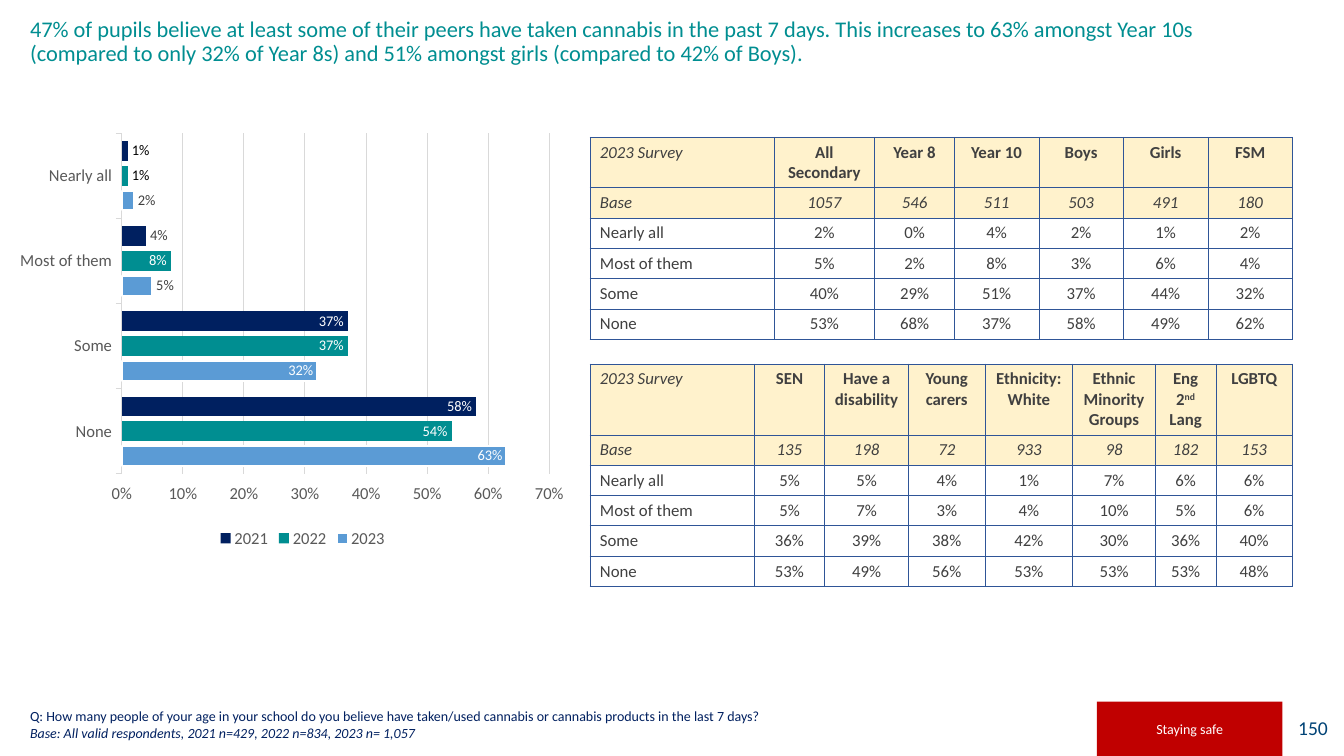
from dataclasses import dataclass

from pptx import Presentation
from pptx.chart.data import CategoryChartData as ChartData
from pptx.dml.color import RGBColor as Color
from pptx.enum.chart import XL_CHART_TYPE as ChartType
from pptx.enum.chart import XL_LABEL_POSITION as LabelSpot
from pptx.enum.chart import XL_LEGEND_POSITION as LegendSpot
from pptx.enum.chart import XL_TICK_MARK as Tick
from pptx.enum.shapes import MSO_SHAPE as Preset
from pptx.enum.text import MSO_ANCHOR as Anchor
from pptx.enum.text import PP_ALIGN as Align
from pptx.oxml import parse_xml
from pptx.oxml.ns import nsdecls
from pptx.util import Inches, Pt


@dataclass(frozen=True)
class Theme:
    font: str = "Calibri"
    navy: str = "002060"
    teal: str = "008E91"
    sky: str = "5B9BD5"
    red: str = "C00000"
    cream: str = "FFF2CC"
    border: str = "2F5597"
    number: str = "004376"
    ink: str = "404040"
    axis: str = "595959"
    grid: str = "D9D9D9"
    black: str = "000000"
    white: str = "FFFFFF"
    title: float = 16
    page: float = 14
    body: float = 12
    label: float = 10.5
    note: float = 10


THEME = Theme()
WIDTH, HEIGHT = Inches(13.33), Inches(7.5)
ROW = 4  # table row, percent of the slide height
MARGIN, TABLE_LEFT, TABLE_WIDTH = 1.5, 43.89, 52.29

CATEGORIES = ["None", "Some", "Most of them", "Nearly all"]
LABEL_STYLES = {
    "inside": (LabelSpot.INSIDE_END, THEME.white),
    "outside": (LabelSpot.OUTSIDE_END, THEME.ink),
    "dark": (LabelSpot.OUTSIDE_END, THEME.black),
}
# name, values, colour, label style, label exceptions by point
SERIES = [
    ("2023", [0.63, 0.32, 0.05, 0.02], THEME.sky, "outside", {0: "inside", 1: "inside"}),
    ("2022", [0.54, 0.37, 0.08, 0.01], THEME.teal, "inside", {3: "dark"}),
    ("2021", [0.58, 0.37, 0.04, 0.01], THEME.navy, "inside", {2: "outside", 3: "dark"}),
]

# Text between ^ signs is superscript
YEAR_TABLE = [
    ["2023 Survey", "All Secondary", "Year 8", "Year 10", "Boys", "Girls", "FSM"],
    ["Base", "1057", "546", "511", "503", "491", "180"],
    ["Nearly all", "2%", "0%", "4%", "2%", "1%", "2%"],
    ["Most of them", "5%", "2%", "8%", "3%", "6%", "4%"],
    ["Some", "40%", "29%", "51%", "37%", "44%", "32%"],
    ["None", "53%", "68%", "37%", "58%", "49%", "62%"],
]
GROUP_TABLE = [
    ["2023 Survey", "SEN", "Have a disability", "Young carers", "Ethnicity: White",
     "Ethnic Minority Groups", "Eng 2^nd^ Lang", "LGBTQ"],
    ["Base", "135", "198", "72", "933", "98", "182", "153"],
    ["Nearly all", "5%", "5%", "4%", "1%", "7%", "6%", "6%"],
    ["Most of them", "5%", "7%", "3%", "4%", "10%", "5%", "6%"],
    ["Some", "36%", "39%", "38%", "42%", "30%", "36%", "40%"],
    ["None", "53%", "49%", "56%", "53%", "53%", "53%", "48%"],
]


def place(left, top, width, height):
    """Turn percentages of the slide into lengths."""
    return [int(share * side / 100) for share, side in
            zip((left, top, width, height), (WIDTH, HEIGHT) * 2)]


def apply(target, values):
    for name, value in values.items():
        setattr(target, name, value)


def style_font(font, size, color, **values):
    apply(font, {"name": THEME.font, "size": Pt(size), **values})
    font.color.rgb = Color.from_string(color)


def paint(fill, color):
    fill.solid()
    fill.fore_color.rgb = Color.from_string(color)


def write(para, text, size, color, align=Align.LEFT, **values):
    para.alignment = align
    for index, part in enumerate(text.split("^")):
        span = para.add_run()
        span.text = part
        style_font(span.font, size, color, **values)
        if index % 2:
            span._r.get_or_add_rPr().set("baseline", "30000")


def add_text(page, area, anchor):
    box = page.shapes.add_textbox(*place(*area))
    apply(box.text_frame, {"word_wrap": True, "vertical_anchor": anchor})
    return box.text_frame


def add_panel(page, area, fill, text, size, color, align):
    panel = page.shapes.add_shape(Preset.RECTANGLE, *place(*area))
    panel.shadow.inherit = False
    paint(panel.fill, fill)
    panel.line.fill.background()
    panel.text_frame.vertical_anchor = Anchor.MIDDLE
    write(panel.text_frame.paragraphs[0], text, size, color, align)


def style_label(label, style):
    label.position, color = LABEL_STYLES[style]
    style_font(label.font, THEME.label, color)


def style_axis(axis, **values):
    apply(axis, {"major_tick_mark": Tick.OUTSIDE, "minor_tick_mark": Tick.NONE, **values})
    style_font(axis.tick_labels.font, THEME.body, THEME.axis)


def style_line(line, color, width):
    line.color.rgb = Color.from_string(color)
    line.width = Pt(width)


def add_bars(page, area):
    data = ChartData(number_format="0%")
    data.categories = CATEGORIES
    for name, values, *_ in SERIES:
        data.add_series(name, values)
    chart = page.shapes.add_chart(ChartType.BAR_CLUSTERED, *place(*area), data).chart
    apply(chart, {"has_title": False, "has_legend": True})
    style_font(chart.font, THEME.note, THEME.black)
    apply(chart.legend, {"position": LegendSpot.BOTTOM, "include_in_layout": False})
    style_font(chart.legend.font, THEME.body, THEME.axis)

    # Axes
    style_axis(chart.category_axis, has_major_gridlines=False)
    style_line(chart.category_axis.format.line, THEME.grid, 0.75)
    value_axis = chart.value_axis
    style_axis(value_axis, minimum_scale=0, maximum_scale=0.7, major_unit=0.1,
               has_major_gridlines=True)
    apply(value_axis.tick_labels, {"number_format": "0%", "number_format_is_linked": False})
    value_axis.format.line.fill.background()
    style_line(value_axis.major_gridlines.format.line, THEME.grid, 0.75)

    # Bars and their labels
    plot = chart.plots[0]
    apply(plot, {"gap_width": 80, "overlap": -25, "vary_by_categories": False})
    for series, (name, _, color, style, exceptions) in zip(plot.series, SERIES):
        paint(series.format.fill, color)
        series.invert_if_negative = False
        if name == "2023":
            style_line(series.format.line, THEME.white, 1.5)
        labels = series.data_labels
        apply(labels, {"show_value": True, "number_format": "0%",
                       "number_format_is_linked": False})
        style_label(labels, style)
        for point, other in exceptions.items():
            style_label(series.points[point].data_label, other)

    # Inner plot area, as shares of the chart
    frame = {"x": 0.17, "y": 0.09, "w": 0.78, "h": 0.74}
    modes = "".join(f'<c:{side}Mode val="edge"/>' for side in "xy")
    sides = "".join(f'<c:{side} val="{share}"/>' for side, share in frame.items())
    plot_area = chart._chartSpace.chart.plotArea
    for layout in plot_area.findall("{*}layout"):
        plot_area.remove(layout)
    plot_area.insert(0, parse_xml(
        f'<c:layout {nsdecls("c")}><c:manualLayout><c:layoutTarget val="inner"/>'
        f"{modes}{sides}</c:manualLayout></c:layout>"))


def add_borders(cell):
    for side in "LRTB":
        cell._tc.get_or_add_tcPr().append(parse_xml(
            f'<a:ln{side} {nsdecls("a")} w="{Pt(0.5)}"><a:solidFill>'
            f'<a:srgbClr val="{THEME.border}"/></a:solidFill></a:ln{side}>'))


def add_survey(page, top, header, weights, rows):
    heights = [header] + [ROW] * (len(rows) - 1)
    area = place(TABLE_LEFT, top, TABLE_WIDTH, sum(heights))
    table = page.shapes.add_table(len(rows), len(weights), *area).table
    apply(table, {"first_row": False, "horz_banding": False})
    for column, weight in zip(table.columns, weights):
        column.width = int(area[2] * weight / sum(weights))
    for row, height in zip(table.rows, heights):
        row.height = int(HEIGHT * height / 100)
    for r, texts in enumerate(rows):
        for c, text in enumerate(texts):
            cell = table.cell(r, c)
            add_borders(cell)
            if r < 2:
                paint(cell.fill, THEME.cream)
            else:
                cell.fill.background()
            cell.vertical_anchor = Anchor.MIDDLE if r else Anchor.TOP
            write(cell.text_frame.paragraphs[0], text, THEME.body, THEME.ink,
                  Align.CENTER if c else Align.LEFT,
                  bold=r == 0 and c > 0, italic=r == 1 or r == c == 0)


def main():
    deck = Presentation()
    apply(deck, {"slide_width": WIDTH, "slide_height": HEIGHT})
    page = deck.slides.add_slide(deck.slide_layouts[6])

    # Page number and title
    add_panel(page, (95.12, 92.67, 4.43, 7.2), THEME.white, "150",
              THEME.page, THEME.number, Align.RIGHT)
    title = add_text(page, (MARGIN, 1.73, 95, 13.07), Anchor.TOP).paragraphs[0]
    write(title, "47% of pupils believe at least some of their peers have taken cannabis in "
          "the past 7 days. This increases to 63% amongst Year 10s (compared to only 32% of "
          "Year 8s) and 51% amongst girls (compared to 42% of Boys).", THEME.title, THEME.teal)
    title.line_spacing = 0.9

    # Chart and tables
    add_bars(page, (MARGIN, 12.13, 41.41, 60.93))
    add_survey(page, 18.13, 6.7, [1.83, 1, 0.79] + [0.84] * 4, YEAR_TABLE)
    add_survey(page, 48.13, 9.4, [1.63, 0.7, 0.83, 0.76, 0.87, 0.82, 0.6, 0.76], GROUP_TABLE)

    # Footer
    note = add_text(page, (MARGIN, 92.8, 83.95, 5.87), Anchor.BOTTOM)
    write(note.paragraphs[0], "Q: How many people of your age in your school do you believe "
          "have taken/used cannabis or cannabis products in the last 7 days?",
          THEME.note, THEME.navy)
    write(note.add_paragraph(), "Base: All valid respondents, 2021 n=429, 2022 n=834, "
          "2023 n= 1,057", THEME.note, THEME.navy, italic=True)
    add_panel(page, (81.62, 92.8, 13.8, 7.2), THEME.red, "Staying safe",
              THEME.note, THEME.white, Align.CENTER)
    deck.save("out.pptx")


if __name__ == "__main__":
    main()
